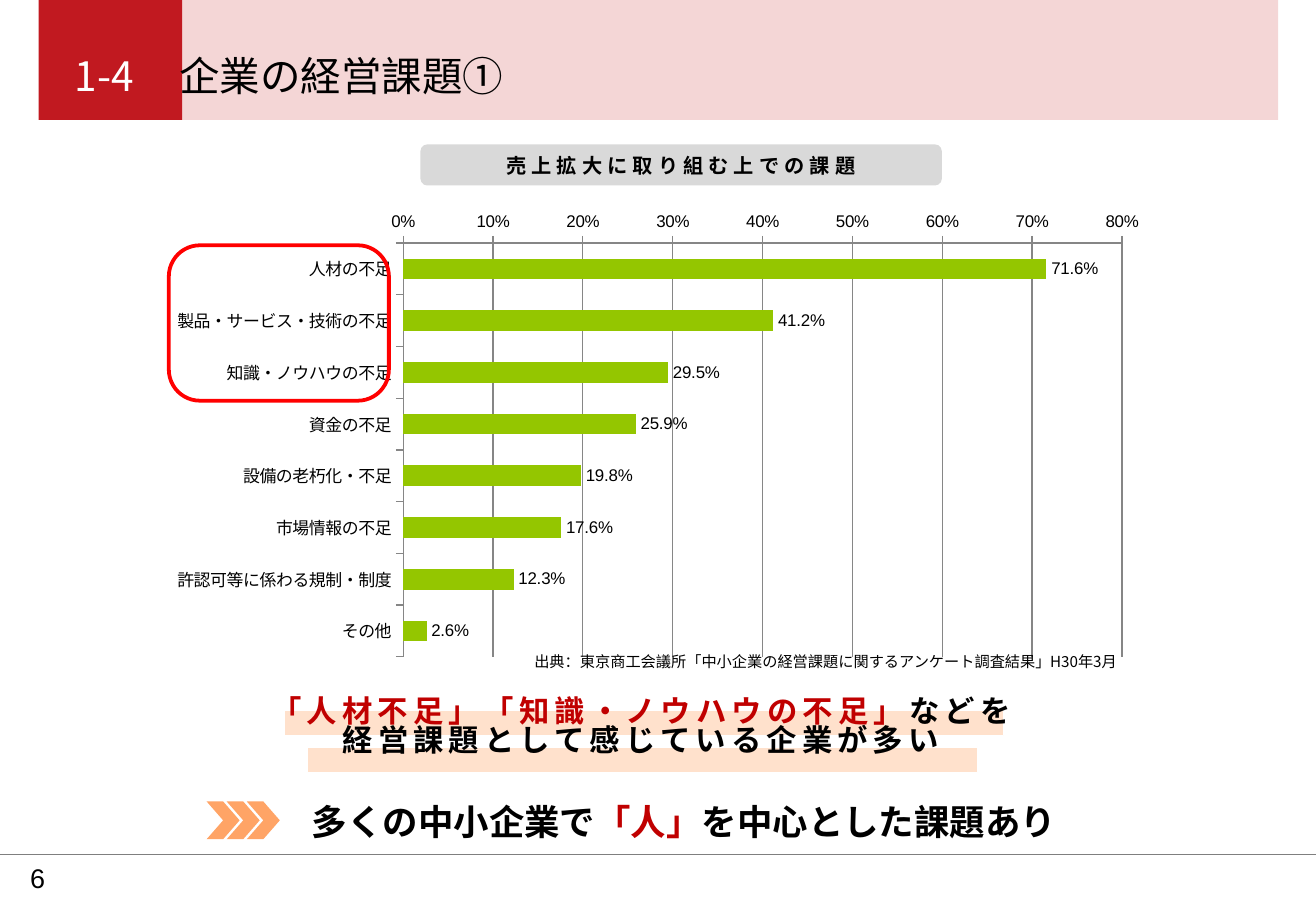
from dataclasses import dataclass

from lxml.etree import SubElement
from pptx import Presentation
from pptx.chart.data import CategoryChartData
from pptx.dml.color import RGBColor
from pptx.enum.chart import XL_CHART_TYPE as Chart, XL_LABEL_POSITION as LabelPos
from pptx.enum.chart import XL_TICK_MARK as Tick
from pptx.enum.shapes import MSO_CONNECTOR as Connector, MSO_SHAPE as Shape
from pptx.enum.text import MSO_ANCHOR as Anchor, PP_ALIGN as Align
from pptx.oxml import parse_xml
from pptx.oxml.ns import nsdecls, qn
from pptx.util import Cm, Pt


@dataclass(frozen=True)
class Theme:
    font: str = "Noto Sans CJK JP"
    number_font: str = "Arial"
    black: str = "000000"
    white: str = "FFFFFF"
    red: str = "C11920"
    accent: str = "C00000"
    frame: str = "FF0000"
    bar: str = "94C600"
    grid: str = "868686"
    rule: str = "7F7F7F"
    label: str = "D9D9D9"
    marker: str = "FFE1CC"
    arrow: str = "FFA466"
    title: int = 24
    conclusion: int = 21
    message: int = 18
    page: int = 16
    heading: int = 12
    chart: int = 10
    source: int = 9


T = Theme()

SECTION, TITLE, PAGE = "1-4", "企業の経営課題①", "6"
HEADING = "売上拡大に取り組む上での課題"
ISSUES = {
    "人材の不足": 0.716,
    "製品・サービス・技術の不足": 0.412,
    "知識・ノウハウの不足": 0.295,
    "資金の不足": 0.259,
    "設備の老朽化・不足": 0.198,
    "市場情報の不足": 0.176,
    "許認可等に係わる規制・制度": 0.123,
    "その他": 0.026,
}
SOURCE = "出典：東京商工会議所「中小企業の経営課題に関するアンケート調査結果」H30年3月"
# Each paragraph is a list of (text, colour) runs.
MESSAGE = [
    [("「人材不足」「知識・ノウハウの不足」", T.accent), ("などを", T.black)],
    [("経営課題として感じている企業が多い", T.black)],
]
CONCLUSION = [[("多くの中小企業で", T.black), ("「人」", T.accent),
               ("を中心とした課題あり", T.black)]]

# Boxes are (left, top, width, height) in cm.
MARKERS = [(5.94, 14.86, 15.04, 0.53), (6.43, 15.62, 14.0, 0.53)]
CHART_BOX = (3.3, 4.24, 20.93, 9.7)
PLOT = {"x": 0.245, "y": 0.087, "w": 0.718, "h": 0.892}  # shares of the chart
CHEVRON_LEFT, CHEVRON_STEP, CHEVRONS = 4.32, 0.42, 3


def rgb(colour):
    return RGBColor.from_string(colour)


def cm(box):
    return [Cm(v) for v in box]


def set_font(font, size, name=T.font, bold=False, spacing=0):
    """Set latin and East Asian typeface, size, weight and letter spacing."""
    font.size, font.name, font.bold = Pt(size), name, bold
    rpr = font._rPr
    if spacing:
        rpr.set("spc", str(spacing * 100))
    ea = SubElement(rpr, qn("a:ea"))
    ea.set("typeface", T.font)
    rpr.find(qn("a:latin")).addnext(ea)


def write(s, paragraphs, size, align=Align.LEFT, anchor=Anchor.TOP,
          line=None, margins=None, wrap=True, **font):
    tf = s.text_frame
    tf.word_wrap, tf.vertical_anchor = wrap, anchor
    if margins:
        (tf.margin_left, tf.margin_top,
         tf.margin_right, tf.margin_bottom) = cm(margins)
    for i, runs in enumerate(paragraphs):
        p = tf.add_paragraph() if i else tf.paragraphs[0]
        p.alignment = align
        if line:
            p.line_spacing = line
        set_font(p.font, size, **font)
        for text, colour in runs:
            r = p.add_run()
            r.text = text
            r.font.color.rgb = rgb(colour)


def add_text(slide, box, paragraphs, size, **style):
    write(slide.shapes.add_textbox(*cm(box)), paragraphs, size, **style)


def add_shape(slide, kind, box, fill=None, line=None, width=0.75):
    s = slide.shapes.add_shape(kind, *cm(box))
    s.shadow.inherit = False
    if fill:
        s.fill.solid()
        s.fill.fore_color.rgb = rgb(fill)
    else:
        s.fill.background()
    if line:
        s.line.color.rgb = rgb(line)
        s.line.width = Pt(width)
    else:
        s.line.fill.background()
    return s


def add_header(slide):
    add_shape(slide, Shape.RECTANGLE, (0.81, 0, 3, 2.51), T.red)
    band = add_shape(slide, Shape.RECTANGLE, (3.81, 0, 22.91, 2.51), T.accent)
    colour = band.fill._xPr.find(qn("a:solidFill"))[0]
    SubElement(colour, qn("a:alpha")).set("val", "16000")
    for left, width, text, fill in ((1.56, 2.2, SECTION, T.white),
                                    (3.75, 22.9, TITLE, T.black)):
        add_text(slide, (left, 0.76, width, 1.8), [[(text, fill)]], T.title,
                 anchor=Anchor.MIDDLE, margins=(0, 0, 0, 0.15))


def add_footer(slide):
    rule = slide.shapes.add_connector(Connector.STRAIGHT, *cm((0, 17.86, 27.51, 17.86)))
    rule.line.color.rgb, rule.line.width = rgb(T.rule), Pt(0.25)
    SubElement(rule._element.spPr, qn("a:effectLst"))
    add_text(slide, (0.63, 17.86, 1.22, 0.99), [[(PAGE, T.black)]], T.page,
             anchor=Anchor.MIDDLE, margins=(0, 0.13, 0, 0.13), name=T.number_font)


def add_issue_chart(slide):
    data = CategoryChartData(number_format="0.0%")
    data.categories = list(ISSUES)
    data.add_series("Series 1", list(ISSUES.values()))
    chart = slide.shapes.add_chart(Chart.BAR_CLUSTERED, *cm(CHART_BOX), data).chart
    chart.has_legend = chart.has_title = False
    set_font(chart.font, T.chart, T.number_font)
    chart.font.color.rgb = rgb(T.black)

    values, categories = chart.value_axis, chart.category_axis
    categories.reverse_order = True
    values.minimum_scale, values.maximum_scale, values.major_unit = 0, 0.8, 0.1
    values.tick_labels.number_format = "0%"
    values.tick_labels.number_format_is_linked = False
    values.has_major_gridlines = True
    for axis in (values, categories):
        axis.major_tick_mark, axis.minor_tick_mark = Tick.OUTSIDE, Tick.NONE
    for part in (values, categories, values.major_gridlines):
        part.format.line.color.rgb, part.format.line.width = rgb(T.grid), Pt(0.75)

    plot = chart.plots[0]
    plot.gap_width, plot.vary_by_categories = 150, False
    fill = plot.series[0].format.fill
    fill.solid()
    fill.fore_color.rgb = rgb(T.bar)
    plot.has_data_labels = True
    labels = plot.data_labels
    labels.show_value, labels.position = True, LabelPos.OUTSIDE_END
    labels.number_format, labels.number_format_is_linked = "0.0%", False

    area = chart._chartSpace.chart.plotArea
    for layout in area.findall(qn("c:layout")):
        area.remove(layout)
    sizes = "".join(f'<c:{k} val="{v}"/>' for k, v in PLOT.items())
    area.insert(0, parse_xml(
        f'<c:layout {nsdecls("c")}><c:manualLayout><c:layoutTarget val="inner"/>'
        f'<c:xMode val="edge"/><c:yMode val="edge"/>{sizes}'
        '</c:manualLayout></c:layout>'))


def main():
    prs = Presentation()
    prs.slide_width, prs.slide_height = Cm(27.51), Cm(19.05)
    slide = prs.slides.add_slide(prs.slide_layouts[6])
    add_footer(slide)
    add_header(slide)
    for box in MARKERS:
        add_shape(slide, Shape.RECTANGLE, box, T.marker, T.white)
    add_issue_chart(slide)
    add_text(slide, (4.32, 14.5, 18.16, 1.8), MESSAGE, T.message,
             align=Align.CENTER, line=0.8, bold=True, spacing=3)
    add_text(slide, (10.92, 13.59, 13.28, 0.64), [[(SOURCE, T.black)]], T.source,
             line=0.8, wrap=False)
    add_text(slide, (6.27, 16.18, 17.96, 1.98), CONCLUSION, T.conclusion,
             anchor=Anchor.MIDDLE, bold=True)
    heading = add_shape(slide, Shape.ROUNDED_RECTANGLE, (8.79, 3.02, 10.9, 0.86), T.label)
    write(heading, [[(HEADING, T.black)]], T.heading, align=Align.CENTER,
          anchor=Anchor.MIDDLE, bold=True, spacing=3)
    frame = add_shape(slide, Shape.ROUNDED_RECTANGLE, (3.53, 5.13, 4.6, 3.25),
                      line=T.frame, width=2.25)
    frame.adjustments[0] = 0.2
    for i in range(CHEVRONS):
        left = CHEVRON_LEFT + i * CHEVRON_STEP
        add_shape(slide, Shape.CHEVRON, (left, 16.76, 0.69, 0.79), T.arrow)
    prs.save("out.pptx")


if __name__ == "__main__":
    main()
